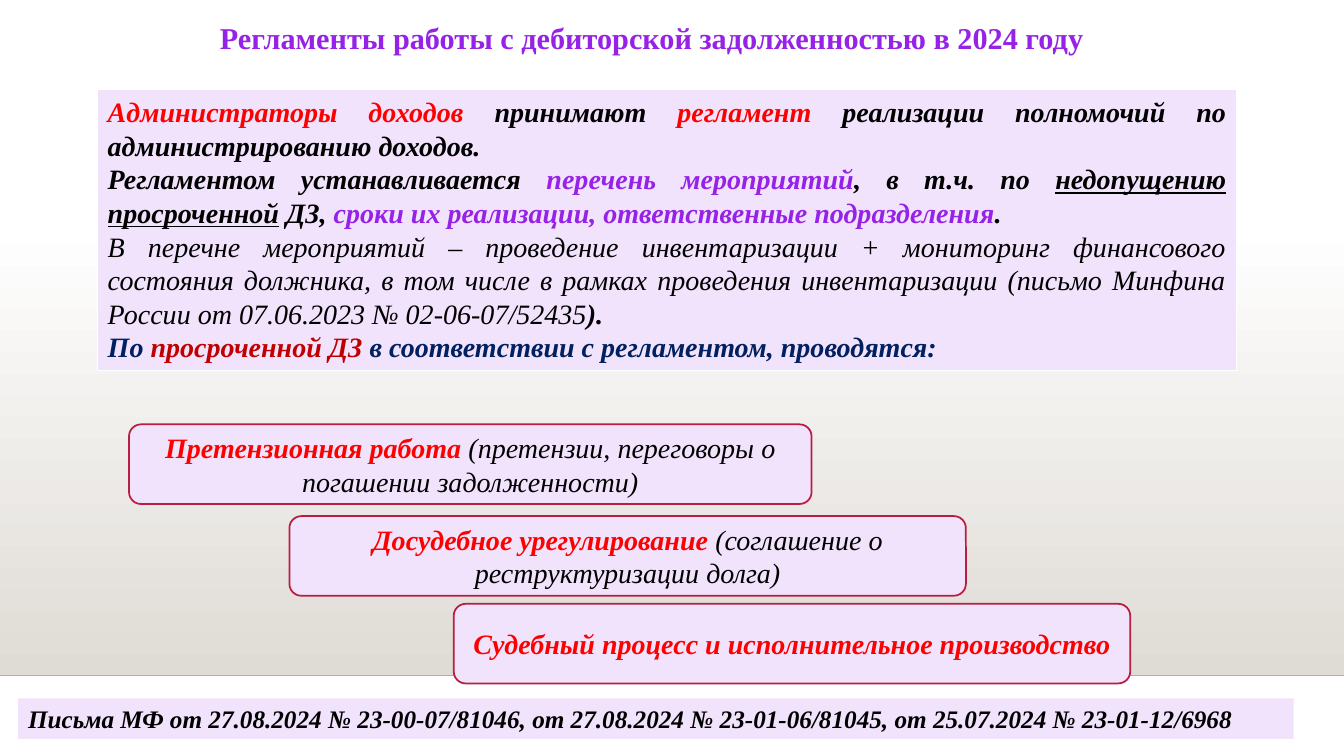
from pptx import Presentation
from pptx.dml.color import RGBColor
from pptx.enum.shapes import MSO_CONNECTOR, MSO_SHAPE
from pptx.enum.text import MSO_ANCHOR, PP_ALIGN
from pptx.util import Inches, Pt
from lxml import etree

RECT, ROUND = MSO_SHAPE.RECTANGLE, MSO_SHAPE.ROUNDED_RECTANGLE
STRAIGHT = MSO_CONNECTOR.STRAIGHT
TOP, MIDDLE = MSO_ANCHOR.TOP, MSO_ANCHOR.MIDDLE
LEFT, CENTER, JUSTIFY = PP_ALIGN.LEFT, PP_ALIGN.CENTER, PP_ALIGN.JUSTIFY
FONT = "Times New Roman"
WIDE, HIGH = 13.33, 7.5

COLORS = {
    "white": "FFFFFF", "black": "000000", "lilac": "F2E3FC", "violet": "9622E7",
    "red": "FF0000", "dark": "C00000", "navy": "002060", "wine": "B71E42",
    "sand": "DFDBD5", "gray": "B2AFAA",
}

TITLE = [[("Регламенты работы с дебиторской задолженностью в 2024 году", "violet", "b")]]
RULES = [
    [("Администраторы доходов ", "red", "bi"), ("принимают ", "black", "bi"),
     ("регламент ", "red", "bi"),
     ("реализации полномочий по администрированию доходов.", "black", "bi")],
    [("Регламентом устанавливается ", "black", "bi"),
     ("перечень мероприятий", "violet", "bi"), (", в т.ч. по ", "black", "bi"),
     ("недопущению", "black", "biu"), (" ", "black", "bi"),
     ("просроченной", "black", "biu"), (" ДЗ, ", "black", "bi"),
     ("сроки их реализации, ответственные подразделения", "violet", "bi"),
     (".", "black", "bi")],
    [("В перечне мероприятий – проведение инвентаризации + мониторинг финансового "
      "состояния должника, в том числе в рамках проведения инвентаризации "
      "(письмо Минфина России от 07.06.2023 № 02-06-07/52435", "black", "i"),
     (").", "black", "bi")],
    [("По ", "navy", "bi"), ("просроченной ДЗ ", "dark", "bi"),
     ("в соответствии с регламентом, проводятся:", "navy", "bi")],
]
STEPS = [
    (1.28, 4.21, 6.77, [("Претензионная работа ", "red", "bi"),
     ("(претензии, переговоры о погашении задолженности)", "black", "i")]),
    (2.87, 5.12, 6.71, [("Досудебное урегулирование ", "red", "bi"),
     ("(соглашение о реструктуризации долга)", "black", "i")]),
    (4.5, 5.99, 6.71, [("Судебный процесс и исполнительное производство", "red", "bi")]),
]
STEP_HIGH = 0.79
LETTERS = [[("Письма МФ от 27.08.2024 № 23-00-07/81046, от 27.08.2024 № 23-01-06/81045, "
             "от 25.07.2024 № 23-01-12/6968", "black", "bi")]]


def rgb(name):
    return RGBColor.from_string(COLORS[name])


def box(kind, area, line=None, width=1):
    shape = slide.shapes.add_shape(kind, *map(Inches, area))
    shape.shadow.inherit = False
    shape.fill.solid()
    shape.fill.fore_color.rgb = rgb("lilac")
    if line:
        shape.line.color.rgb = rgb(line)
        shape.line.width = Pt(width)
    else:
        shape.line.fill.background()
    return shape


def write(shape, lines, size, align, anchor=TOP):
    frame = shape.text_frame
    frame.word_wrap = True
    frame.vertical_anchor = anchor
    for i, runs in enumerate(lines):
        para = frame.add_paragraph() if i else frame.paragraphs[0]
        para.alignment = align
        para.font.name = FONT
        para.font.size = Pt(size)
        for text, color, style in runs:
            run = para.add_run()
            run.text = text
            run.font.color.rgb = rgb(color)
            run.font.bold = "b" in style
            run.font.italic = "i" in style
            run.font.underline = "u" in style
    return frame


deck = Presentation()
deck.slide_width, deck.slide_height = Inches(WIDE), Inches(HIGH)
slide = deck.slides.add_slide(deck.slide_layouts[6])

floor = box(RECT, (0, 2.21, WIDE, 4.49))
floor.fill.gradient()
floor.fill.gradient_angle = 270
for stop, color in zip(floor.fill.gradient_stops, ("white", "sand")):
    stop.color.rgb = rgb(color)

edge = slide.shapes.add_connector(STRAIGHT, 0, Inches(6.7), Inches(WIDE), Inches(6.7))
edge.line.color.rgb = rgb("gray")
edge.line.width = Pt(1)
props = edge.element.spPr
etree.SubElement(props, props.nsmap["a"].join("{}") + "effectLst")

title = slide.shapes.add_textbox(*map(Inches, (1.28, 0.18, 9.76, 0.71)))
head = write(title, TITLE, 21.6, CENTER).paragraphs[0]
head.line_spacing = 0.9
head._p.get_or_add_pPr().set("indent", str(Inches(0.61)))

write(box(RECT, (0.97, 0.89, 11.29, 2.79), "white", 0.75), RULES, 20, JUSTIFY)

for left, top, width, runs in STEPS:
    step = box(ROUND, (left, top, width, STEP_HIGH), "wine", 1.25)
    step.adjustments[0] = 0.15
    write(step, [runs], 20, CENTER, MIDDLE)

write(box(RECT, (0.18, 6.93, 12.65, 0.4)), LETTERS, 18, LEFT)

deck.save("out.pptx")
